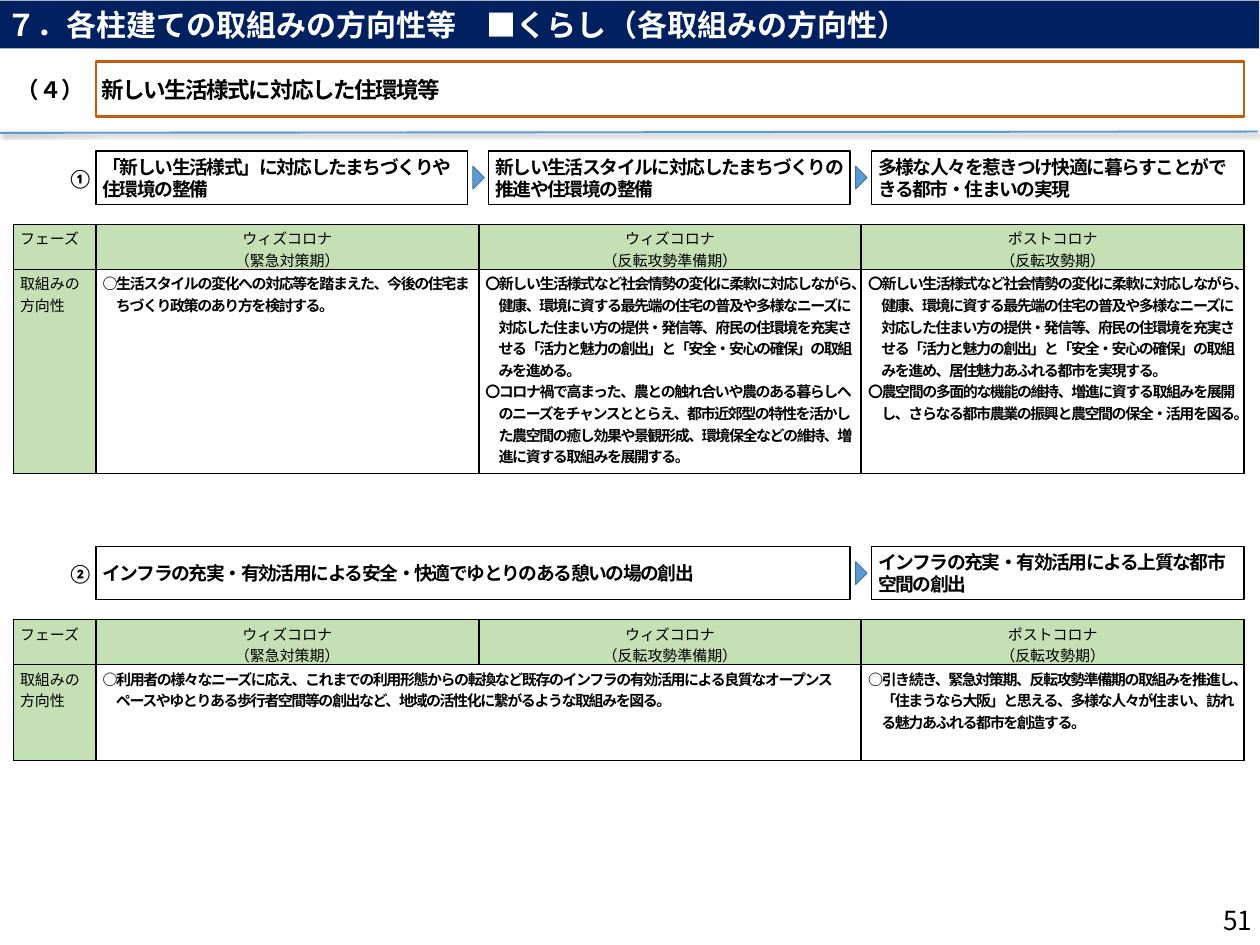
from dataclasses import dataclass

from lxml.etree import SubElement
from pptx import Presentation
from pptx.dml.color import RGBColor
from pptx.enum.shapes import MSO_CONNECTOR, MSO_SHAPE
from pptx.enum.text import MSO_ANCHOR, PP_ALIGN
from pptx.oxml.ns import qn
from pptx.util import Cm, Pt


@dataclass(frozen=True)
class Theme:
    navy: str = "002060"
    green: str = "C5E0B4"
    blue: str = "5B9BD5"
    blue_edge: str = "43739E"
    orange: str = "C55A11"
    black: str = "000000"
    white: str = "FFFFFF"
    title: int = 32
    page_number: int = 28
    heading: int = 24
    goal: int = 20
    table: int = 16
    font: str = "Arial"
    label_font: str = "Calibri"
    asian_font: str = "Noto Sans CJK JP"
    tight: int = -150


THEME = Theme()
GRID_LEFT, LABEL_WIDTH, COLUMN_WIDTH = 0.5, 3.11, 14.4
COLUMNS = [GRID_LEFT + LABEL_WIDTH + COLUMN_WIDTH * i for i in range(4)]
PHASES = ["ウィズコロナ\n（緊急対策期）", "ウィズコロナ\n（反転攻勢準備期）", "ポストコロナ\n（反転攻勢期）"]
SHARED = ("〇新しい生活様式など社会情勢の変化に柔軟に対応しながら、健康、環境に資する最先端の住宅の普及や"
          "多様なニーズに対応した住まい方の提供・発信等、府民の住環境を充実させる「活力と魅力の創出」と"
          "「安全・安心の確保」の取組みを")

# Each goal and direction is: first column, number of columns, text.
SECTIONS = [
    dict(top=5.69, number="①", body_height=7.7,
         goals=[(0, 1, "「新しい生活様式」に対応したまちづくりや住環境の整備"),
                (1, 1, "新しい生活スタイルに対応したまちづくりの推進や住環境の整備"),
                (2, 1, "多様な人々を惹きつけ快適に暮らすことができる都市・住まいの実現")],
         directions=[
             (0, 1, "○生活スタイルの変化への対応等を踏まえた、今後の住宅まちづくり政策のあり方を検討する。"),
             (1, 1, SHARED + "進める。\n〇コロナ禍で高まった、農との触れ合いや農のある暮らしへのニーズを"
              "チャンスととらえ、都市近郊型の特性を活かした農空間の癒し効果や景観形成、環境保全などの維持、"
              "増進に資する取組みを展開する。"),
             (2, 1, SHARED + "進め、居住魅力あふれる都市を実現する。\n〇農空間の多面的な機能の維持、"
              "増進に資する取組みを展開し、さらなる都市農業の振興と農空間の保全・活用を図る。")]),
    dict(top=20.57, number="②", body_height=3.61,
         goals=[(0, 2, "インフラの充実・有効活用による安全・快適でゆとりのある憩いの場の創出"),
                (2, 1, "インフラの充実・有効活用による上質な都市空間の創出")],
         directions=[
             (0, 2, "○利用者の様々なニーズに応え、これまでの利用形態からの転換など既存のインフラの有効活用による"
              "良質なオープンスペースやゆとりある歩行者空間等の創出など、地域の活性化に繋がるような取組みを図る。"),
             (2, 1, "○引き続き、緊急対策期、反転攻勢準備期の取組みを推進し、「住まうなら大阪」と思える、"
              "多様な人々が住まい、訪れる魅力あふれる都市を創造する。")]),
]


def color(name):
    return RGBColor.from_string(name)


def write(frame, text, size, bold=True, tight=False, align=PP_ALIGN.LEFT, fill=THEME.black, font=THEME.font):
    frame.text = text
    frame.word_wrap = True
    for para in frame.paragraphs:
        para.alignment = align
        for span in para.runs:
            span.font.size, span.font.bold, span.font.name = Pt(size), bold, font
            span.font.color.rgb = color(fill)
            properties = span.font._element
            SubElement(properties, qn("a:ea"), typeface=THEME.asian_font)
            if tight:
                properties.set("spc", str(THEME.tight))


def add_label(page, box, text, size, align=PP_ALIGN.CENTER, bold=True, font=THEME.label_font):
    label = page.shapes.add_textbox(*map(Cm, box))
    write(label.text_frame, text, size, bold, align=align, font=font)
    label.text_frame.vertical_anchor = MSO_ANCHOR.MIDDLE


def add_box(page, kind, box, fill, line, width):
    shape = page.shapes.add_shape(kind, *map(Cm, box))
    shape.shadow.inherit = False
    if fill:
        shape.fill.solid()
        shape.fill.fore_color.rgb = color(fill)
    else:
        shape.fill.background()
    shape.line.color.rgb = color(line)
    shape.line.width = Pt(width)
    return shape


def add_title(page, box, text):
    title = page.shapes.title
    title.left, title.top, title.width, title.height = map(Cm, box)
    title.fill.solid()
    title.fill.fore_color.rgb = color(THEME.navy)
    write(title.text_frame, text, THEME.title, fill=THEME.white)
    title.text_frame.vertical_anchor = MSO_ANCHOR.MIDDLE


def add_heading(page, box, number, text):
    left, top, width, height = box
    add_label(page, (0, top, left + 0.2, height), number, THEME.heading)
    banner = add_box(page, MSO_SHAPE.PENTAGON, box, None, THEME.orange, 3)
    banner.adjustments[0] = 0
    write(banner.text_frame, text, THEME.heading, tight=True)
    banner.text_frame.margin_left = banner.text_frame.margin_right = Cm(0.2)
    banner.text_frame.vertical_anchor = MSO_ANCHOR.MIDDLE


def add_divider(page, start, end):
    line = page.shapes.add_connector(MSO_CONNECTOR.STRAIGHT, *map(Cm, start + end))
    line.line.color.rgb = color(THEME.blue)
    line.line.width = Pt(2)
    effects = SubElement(line._element.spPr, qn("a:effectLst"))
    shadow = SubElement(effects, qn("a:outerShdw"), blurRad=str(Pt(4)), dist=str(Pt(3)), dir="2700000")
    shade = SubElement(shadow, qn("a:srgbClr"), val=THEME.black)
    SubElement(shade, qn("a:alpha"), val="40000")


def add_goals(page, top, height, number, goals):
    """Place a numbered row of goal boxes, with an arrow on each column border between them."""
    middle = top + height / 2
    add_label(page, (1.7, middle - 0.9, 2.64, 1.8), number, THEME.goal)
    for first, count, text in goals:
        left, right = COLUMNS[first], COLUMNS[first + count]
        if first > 0:
            arrow = add_box(page, MSO_SHAPE.ISOSCELES_TRIANGLE, (left - 0.43, middle - 0.22, 0.86, 0.43),
                            THEME.blue, THEME.blue_edge, 1)
            arrow.rotation = 90
            left += 0.38
        if first + count < len(PHASES):
            right -= 0.42
        goal = add_box(page, MSO_SHAPE.RECTANGLE, (left, top, right - left, height),
                       THEME.white, THEME.black, 1.5)
        write(goal.text_frame, text, THEME.goal, tight=True)
        goal.text_frame.vertical_anchor = MSO_ANCHOR.MIDDLE


def set_borders(cell, left_width):
    properties = cell._tc.get_or_add_tcPr()
    for side, width in (("L", left_width), ("R", 2.25), ("T", 1), ("B", 1)):
        line = SubElement(properties, qn(f"a:ln{side}"), w=str(Pt(width)))
        fill = SubElement(line, qn("a:solidFill"))
        SubElement(fill, qn("a:srgbClr"), val=THEME.black)


def add_phase_table(page, top, body_height, directions):
    header_height = 1.7
    box = (GRID_LEFT, top, COLUMNS[-1] - GRID_LEFT, header_height + body_height)
    table = page.shapes.add_table(2, 4, *map(Cm, box)).table
    table.first_row = table.horz_banding = False
    for i, column in enumerate(table.columns):
        column.width = Cm(COLUMN_WIDTH if i else LABEL_WIDTH)
    for row, height in zip(table.rows, (header_height, body_height)):
        row.height = Cm(height)
        for i, cell in enumerate(row.cells):
            set_borders(cell, 2.25 if i else 1)
            cell.fill.background()
    for cell in (*table.rows[0].cells, table.cell(1, 0)):
        cell.fill.solid()
        cell.fill.fore_color.rgb = color(THEME.green)

    write(table.cell(0, 0).text_frame, "フェーズ", THEME.table, bold=False)
    write(table.cell(1, 0).text_frame, "取組みの\n方向性", THEME.table, bold=False)
    for i, phase in enumerate(PHASES, 1):
        cell = table.cell(0, i)
        write(cell.text_frame, phase, THEME.table, bold=False, align=PP_ALIGN.CENTER)
        cell.vertical_anchor = MSO_ANCHOR.MIDDLE
    for first, count, text in directions:
        cell = table.cell(1, first + 1)
        if count > 1:
            cell.merge(table.cell(1, first + count))
        write(cell.text_frame, text, THEME.table, tight=True)
        for para in cell.text_frame.paragraphs:
            properties = para._p.get_or_add_pPr()
            properties.set("marL", str(Cm(0.5)))
            properties.set("indent", str(Cm(-0.5)))


def add_section(page, top, number, body_height, goals, directions):
    add_goals(page, top, 2, number, goals)
    add_phase_table(page, top + 2.74, body_height, directions)


def main():
    deck = Presentation()
    deck.slide_width, deck.slide_height = Cm(47.41), Cm(35.56)
    page = deck.slides.add_slide(deck.slide_layouts[5])
    add_title(page, (0, 0.02, 47.38, 1.8), "７．各柱建ての取組みの方向性等　■くらし（各取組みの方向性）")
    add_heading(page, (COLUMNS[0], 2.31, COLUMNS[-1] - COLUMNS[0], 2.08), "（４）", "新しい生活様式に対応した住環境等")
    add_divider(page, (0, 5), (47.32, 4.95))
    for section in SECTIONS:
        add_section(page, **section)
    add_label(page, (44.98, 33.66, 2.39, 1.9), "51", THEME.page_number, PP_ALIGN.RIGHT, False, THEME.asian_font)
    deck.save("out.pptx")


if __name__ == "__main__":
    main()
